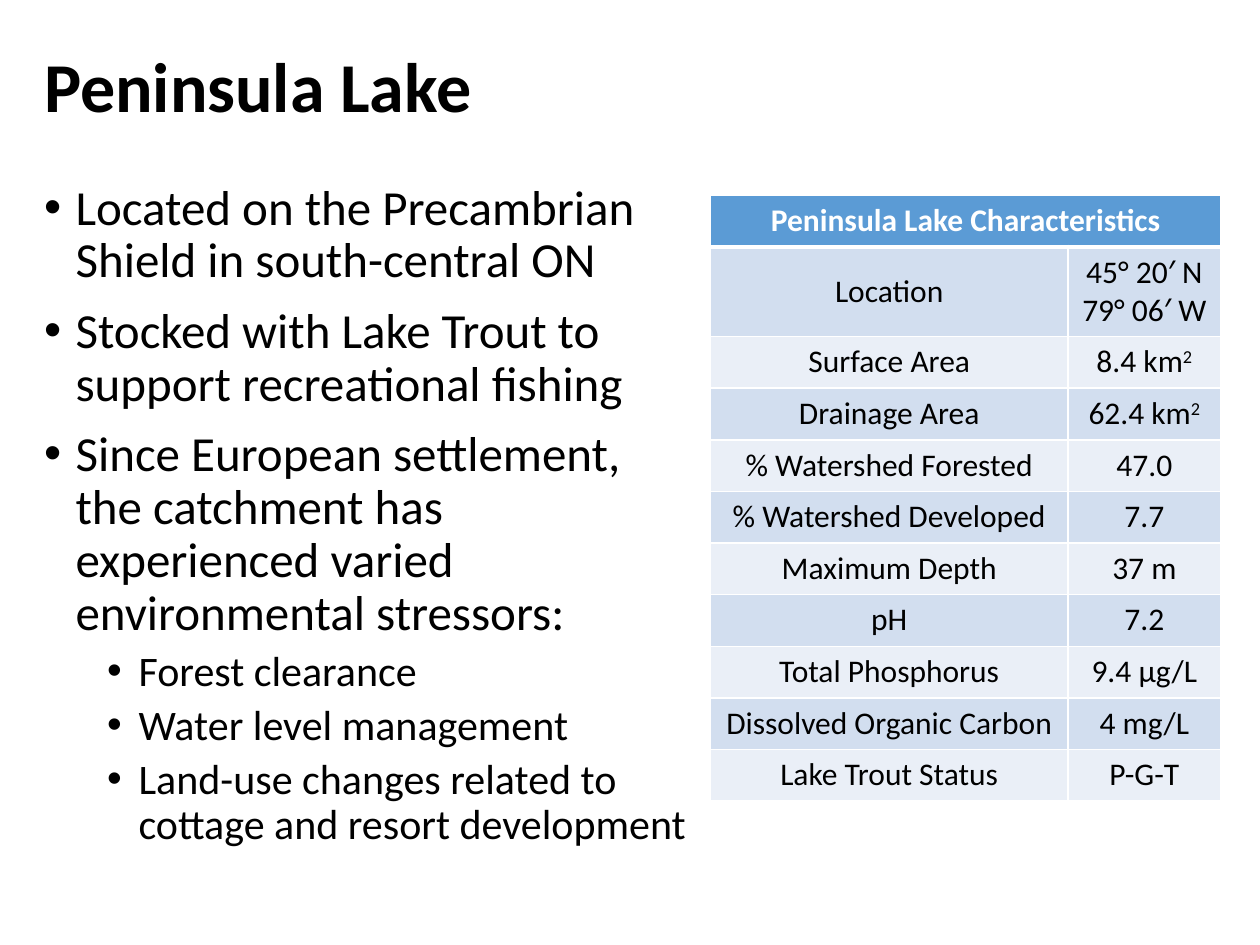
from lxml import etree
from pptx import Presentation
from pptx.dml.color import RGBColor
from pptx.enum.text import MSO_ANCHOR, MSO_AUTO_SIZE, PP_ALIGN
from pptx.oxml.ns import qn
from pptx.util import Inches, Pt

LEFT, CENTER = PP_ALIGN.LEFT, PP_ALIGN.CENTER
TOP, MIDDLE = MSO_ANCHOR.TOP, MSO_ANCHOR.MIDDLE
NO_FIT = MSO_AUTO_SIZE.NONE
FONT = "Calibri"
BLACK, WHITE = "000000", "FFFFFF"
HEAD, BANDS = "5B9BD5", ("D2DEEF", "EAEFF7")
WIDE, HIGH = 10, 7.5
EDGE = 0.25

POINTS = [
    (0, "Located on the Precambrian Shield in south-central ON"),
    (0, "Stocked with Lake Trout to support recreational fishing"),
    (0, "Since European settlement, the catchment has experienced "
        "varied environmental stressors:"),
    (1, "Forest clearance"),
    (1, "Water level management"),
    (1, "Land-use changes related to cottage and resort development"),
]
# Per level: text size, space before, left margin
LEVELS = [(28, 10, 0.25), (24, 5, 0.75)]

# Name, value, superscript
FACTS = [
    ("Location", "45° 20′ N 79° 06′ W", ""),
    ("Surface Area", "8.4 km", "2"),
    ("Drainage Area", "62.4 km", "2"),
    ("% Watershed Forested", "47.0", ""),
    ("% Watershed Developed", "7.7", ""),
    ("Maximum Depth", "37 m", ""),
    ("pH", "7.2", ""),
    ("Total Phosphorus", "9.4 μg/L", ""),
    ("Dissolved Organic Carbon", "4 mg/L", ""),
    ("Lake Trout Status", "P-G-T", ""),
]


def color(hex):
    return RGBColor.from_string(hex)


def style(run, size, hex=BLACK, bold=False):
    font = run.font
    font.name, font.size, font.bold = FONT, Pt(size), bold
    font.color.rgb = color(hex)


def place(shape, box, anchor):
    shape.left, shape.top, shape.width, shape.height = map(Inches, box)
    frame = shape.text_frame
    frame.word_wrap = True
    frame.auto_size = NO_FIT
    frame.vertical_anchor = anchor
    return frame


def add_title(slide, box, text):
    frame = place(slide.shapes.title, box, MIDDLE)
    frame.text = text
    para = frame.paragraphs[0]
    para.alignment, para.line_spacing = LEFT, 0.9
    style(para.runs[0], 40, bold=True)


def add_list(slide, box, points):
    frame = place(slide.placeholders[1], box, TOP)
    frame.text = "\n".join(text for _, text in points)
    for para, (level, _) in zip(frame.paragraphs, points):
        size, space, margin = LEVELS[level]
        para.level, para.line_spacing = level, 0.9
        para.space_before = Pt(space)
        style(para.runs[0], size)
        # Hanging bullet
        props = para._p.get_or_add_pPr()
        props.set("marL", str(Inches(margin)))
        props.set("indent", str(Inches(-0.25)))
        etree.SubElement(props, qn("a:buFont")).set("typeface", "Arial")
        etree.SubElement(props, qn("a:buChar")).set("char", "•")


def add_rules(cell, top, low):
    props = cell._tc.get_or_add_tcPr()
    for side, width in zip("LRTB", (1, 1, top, low)):
        line = etree.SubElement(props, qn("a:ln" + side))
        line.set("w", str(Pt(width)))
        fill = etree.SubElement(line, qn("a:solidFill"))
        etree.SubElement(fill, qn("a:srgbClr")).set("val", WHITE)


def fill_cell(cell, text, fill, hex=BLACK, bold=False, sup="",
              anchor=TOP, top=1, low=1):
    add_rules(cell, top, low)
    cell.fill.solid()
    cell.fill.fore_color.rgb = color(fill)
    cell.vertical_anchor = anchor
    cell.text_frame.text = text
    para = cell.text_frame.paragraphs[0]
    para.alignment = CENTER
    if sup:
        run = para.add_run()
        run.text = sup
        run.font._element.set("baseline", "30000")
    for run in para.runs:
        style(run, 18, hex, bold)


def add_facts(slide, box, title, facts):
    left, top, width, row = box
    count = len(facts) + 1
    table = slide.shapes.add_table(
        count, 2, *map(Inches, (left, top, width, row * count))).table
    for col, share in zip(table.columns, (0.7, 0.3)):
        col.width = Inches(width * share)
    # Header across both columns
    table.cell(0, 0).merge(table.cell(0, 1))
    fill_cell(table.cell(0, 0), title, HEAD, WHITE, True, low=3)
    add_rules(table.cell(0, 1), 1, 3)
    # Banded rows
    for i, (name, value, sup) in enumerate(facts):
        look = dict(fill=BANDS[i % 2], anchor=TOP if i else MIDDLE,
                    top=1 if i else 3)
        fill_cell(table.cell(i + 1, 0), name, **look)
        fill_cell(table.cell(i + 1, 1), value, sup=sup, **look)


def main():
    deck = Presentation()
    deck.slide_width, deck.slide_height = Inches(WIDE), Inches(HIGH)
    slide = deck.slides.add_slide(deck.slide_layouts[1])
    add_title(slide, (EDGE, 0.19, WIDE - 2 * EDGE, 1.04), "Peninsula Lake")
    add_list(slide, (EDGE, 1.4, 5.35, 5.84), POINTS)
    add_facts(slide, (5.64, 1.55, 4.05, 0.41),
              "Peninsula Lake Characteristics", FACTS)
    deck.save("out.pptx")


if __name__ == "__main__":
    main()
